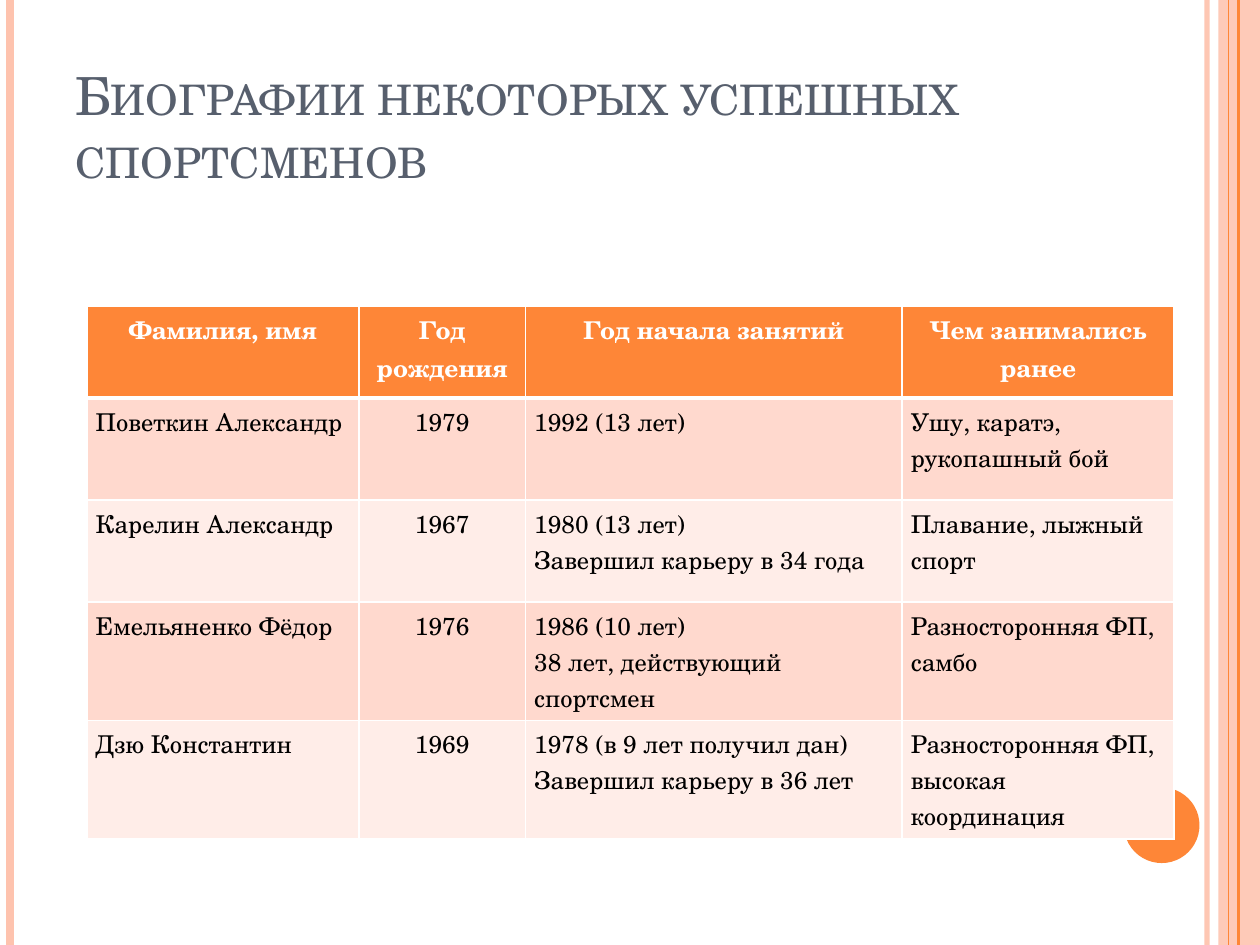
from lxml import etree
from pptx import Presentation
from pptx.dml.color import RGBColor
from pptx.enum.shapes import MSO_CONNECTOR, MSO_SHAPE
from pptx.enum.text import MSO_ANCHOR, MSO_AUTO_SIZE, PP_ALIGN
from pptx.oxml import parse_xml
from pptx.oxml.ns import qn
from pptx.util import Inches, Pt

STRAIGHT = MSO_CONNECTOR.STRAIGHT
RECTANGLE, OVAL = MSO_SHAPE.RECTANGLE, MSO_SHAPE.OVAL
LEFT, CENTER = PP_ALIGN.LEFT, PP_ALIGN.CENTER
TOP, BOTTOM = MSO_ANCHOR.TOP, MSO_ANCHOR.BOTTOM
NO_AUTOFIT = MSO_AUTO_SIZE.NONE

FONT = "TeX Gyre Schola"
ORANGE, PEACH, WHITE = "FE8637", "FEC3AE", "FFFFFF"
BAND_COLORS = ["FFEDE8", "FFD9CE"]
NAMESPACE = "http://schemas.openxmlformats.org/drawingml/2006/main"


def color(hex_string):
    return RGBColor.from_string(hex_string)


def write_text(text_frame, text, size=14, font_color="000000", bold=False,
               align=LEFT, small_caps=False):
    text_frame.text = text
    for paragraph in text_frame.paragraphs:
        paragraph.alignment = align
        for run in paragraph.runs:
            run.font.name = FONT
            run.font.size = Pt(size)
            run.font.bold = bold
            run.font.color.rgb = color(font_color)
            if small_caps:
                run.font._element.set("cap", "small")


presentation = Presentation()
presentation.slide_width = Inches(10)
presentation.slide_height = Inches(7.5)
slide = presentation.slides.add_slide(presentation.slide_layouts[5])
shapes = slide.shapes

# Side band and corner circle
band = shapes.add_shape(RECTANGLE, Inches(9.67), 0, Inches(0.33), Inches(7.5))
circle = shapes.add_shape(OVAL, Inches(8.92), Inches(6.25), Inches(0.6), Inches(0.6))
for shape, fill_color in [(band, PEACH), (circle, ORANGE)]:
    shape.shadow.inherit = False
    shape.fill.solid()
    shape.fill.fore_color.rgb = color(fill_color)
    shape.line.fill.background()
band_fill = band._element.spPr.find(qn("a:solidFill"))[0]
etree.SubElement(band_fill, qn("a:alpha"), val="87000")

# Vertical stripes: x, colour, width, opacity in percent
stripes = [
    (9.58, PEACH, 3, 93),
    (0.08, PEACH, 4.5, 100),
    (9.83, ORANGE, 1.5, 100),
    (9.75, ORANGE, 0.75, 100),
]
for x, stripe_color, width, opacity in stripes:
    stripe = shapes.add_connector(STRAIGHT, Inches(x), 0, Inches(x), Inches(7.5))
    stripe.line.color.rgb = color(stripe_color)
    stripe.line.width = Pt(width)
    properties = stripe._element.spPr
    if opacity < 100:
        stripe_fill = properties.find(qn("a:ln")).find(qn("a:solidFill"))[0]
        etree.SubElement(stripe_fill, qn("a:alpha"), val=str(opacity * 1000))
    etree.SubElement(properties, qn("a:effectLst"))

# Title
title = shapes.title
title.left, title.top = Inches(0.5), Inches(0.3)
title.width, title.height = Inches(8.17), Inches(1.25)
title.text_frame.word_wrap = True
title.text_frame.auto_size = NO_AUTOFIT
title.text_frame.vertical_anchor = BOTTOM
write_text(title.text_frame, "Биографии некоторых успешных спортсменов",
           size=30, font_color="575F6D", small_caps=True)

# Table of athletes
rows = [
    ["Фамилия, имя", "Год рождения", "Год начала занятий", "Чем занимались ранее"],
    ["Поветкин Александр", "1979", "1992 (13 лет)", "Ушу, каратэ, рукопашный бой"],
    ["Карелин Александр", "1967", "1980 (13 лет)\nЗавершил карьеру в 34 года",
     "Плавание, лыжный спорт"],
    ["Емельяненко Фёдор", "1976", "1986 (10 лет)\n38 лет, действующий спортсмен",
     "Разносторонняя ФП, самбо"],
    ["Дзю Константин", "1969", "1978 (в 9 лет получил дан)\nЗавершил карьеру в 36 лет",
     "Разносторонняя ФП, высокая координация"],
]
column_widths = [2.16, 1.32, 2.99, 2.16]
row_heights = [0.73] + [0.81] * 4
table = shapes.add_table(len(rows), len(column_widths), Inches(0.69), Inches(2.43),
                         Inches(8.62), Inches(3.98)).table
for column, width in zip(table.columns, column_widths):
    column.width = Inches(width)

for row_index, (row, values) in enumerate(zip(table.rows, rows)):
    row.height = Inches(row_heights[row_index])
    header = row_index == 0
    border_widths = {"L": 1, "R": 1, "T": 3 if row_index == 1 else 1,
                     "B": 3 if header else 1}
    for column_index, (cell, value) in enumerate(zip(row.cells, values)):
        cell.margin_left = cell.margin_right = Inches(0.07)
        cell.margin_top = cell.margin_bottom = Inches(0.04)
        cell.vertical_anchor = TOP
        write_text(cell.text_frame, value, bold=header,
                   font_color=WHITE if header else "000000",
                   align=CENTER if header or column_index == 1 else LEFT)
        # Borders come before the fill in the cell properties
        for side, width in border_widths.items():
            cell._tc.get_or_add_tcPr().append(parse_xml(
                f'<a:ln{side} xmlns:a="{NAMESPACE}" w="{Pt(width)}"><a:solidFill>'
                f'<a:srgbClr val="{WHITE}"/></a:solidFill></a:ln{side}>'))
        cell.fill.solid()
        cell.fill.fore_color.rgb = color(ORANGE if header else BAND_COLORS[row_index % 2])

presentation.save("out.pptx")
